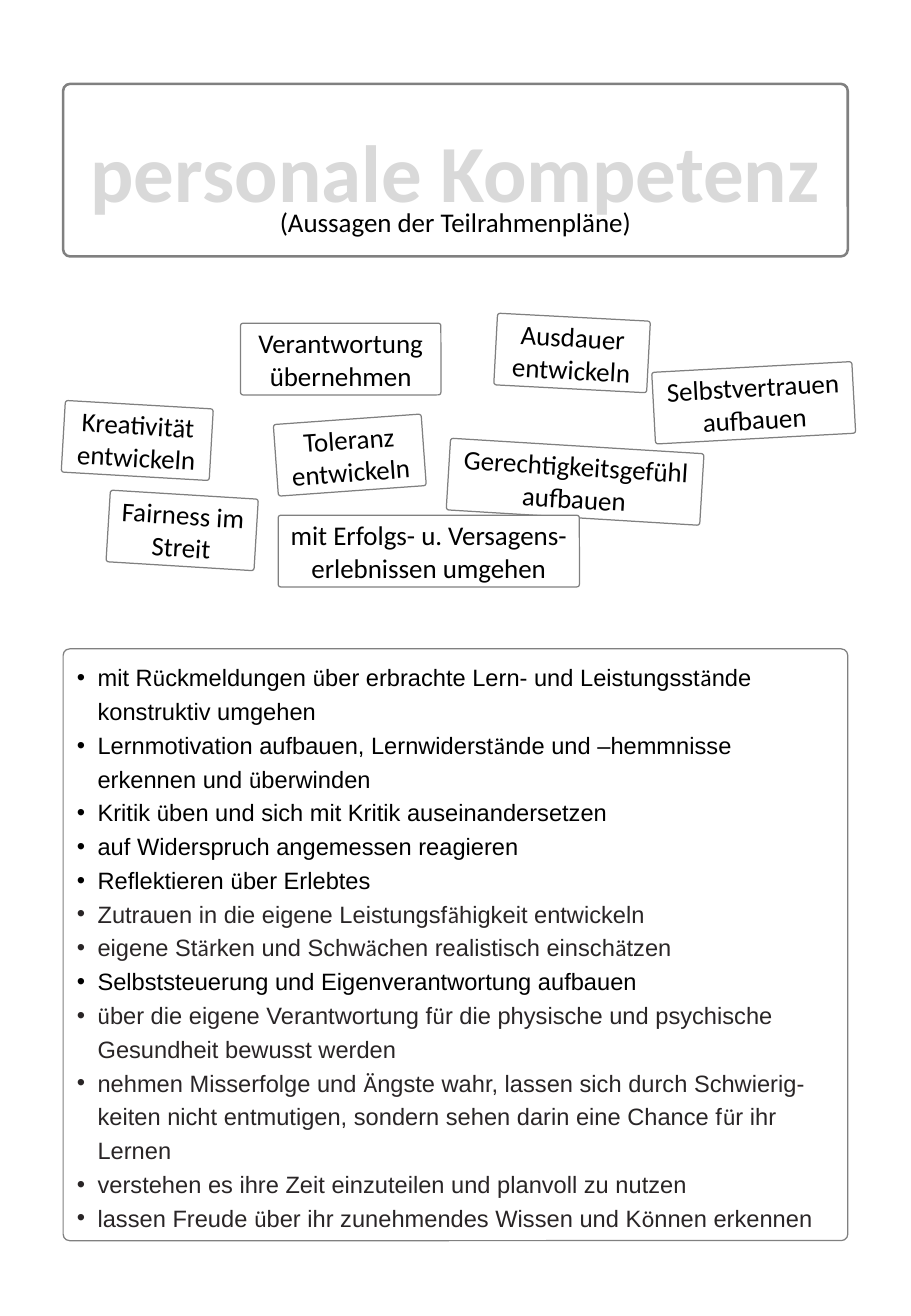
from itertools import groupby

from lxml import etree
from pptx import Presentation
from pptx.dml.color import RGBColor
from pptx.enum.shapes import MSO_SHAPE
from pptx.enum.text import MSO_ANCHOR, PP_ALIGN
from pptx.oxml.ns import qn
from pptx.util import Inches, Pt

ROUND = MSO_SHAPE.ROUNDED_RECTANGLE
MIDDLE = MSO_ANCHOR.MIDDLE
CENTER = PP_ALIGN.CENTER
LEFT = PP_ALIGN.LEFT

BLACK = RGBColor(0x00, 0x00, 0x00)
WHITE = RGBColor(0xFF, 0xFF, 0xFF)
GRAY = RGBColor(0x80, 0x80, 0x80)
PALE = RGBColor(0xD9, 0xD9, 0xD9)
DARK = RGBColor(0x29, 0x25, 0x26)

CELL = Inches(0.1)
WIDE, TALL = 75, 108.3
EDGE, SPAN = 5.2, 64.6
HANG = 1.7

CARDS = [
    ("Verantwortung übernehmen", 19.8, 26.6, 16.5, 0),
    ("Toleranz entwickeln", 22.7, 34.5, 12.2, -4.1),
    ("Kreativität entwickeln", 5.2, 33.3, 12.2, 3.3),
    ("Ausdauer entwickeln", 40.8, 26.1, 12.6, 3),
    ("Gerechtigkeitsgefühl aufbauen", 36.9, 36.7, 20.9, 3.5),
    ("Fairness im Streit", 8.9, 40.7, 12.2, 3.5),
    ("Selbstvertrauen aufbauen", 53.8, 30.2, 16.5, -3.1),
    ("mit Erfolgs- u. Versagens-erlebnissen umgehen", 22.9, 42.4, 24.8, 0),
]

GOALS = [
    (BLACK, ["mit Rückmeldungen über erbrachte Lern- und Leistungsstände",
             "konstruktiv umgehen"]),
    (BLACK, ["Lernmotivation aufbauen, Lernwiderstände und –hemmnisse",
             "erkennen und überwinden"]),
    (BLACK, ["Kritik üben und sich mit Kritik auseinandersetzen"]),
    (BLACK, ["auf Widerspruch angemessen reagieren"]),
    (BLACK, ["Reflektieren über Erlebtes"]),
    (DARK, ["Zutrauen in die eigene Leistungsfähigkeit entwickeln"]),
    (DARK, ["eigene Stärken und Schwächen realistisch einschätzen"]),
    (BLACK, ["Selbststeuerung und Eigenverantwortung aufbauen"]),
    (DARK, ["über die eigene Verantwortung für die physische und psychische",
            "Gesundheit bewusst werden"]),
    (DARK, ["nehmen Misserfolge und Ängste wahr, lassen sich durch Schwierig-",
            "keiten nicht entmutigen, sondern sehen darin eine Chance für ihr",
            "Lernen"]),
    (DARK, ["verstehen es ihre Zeit einzuteilen und planvoll zu nutzen"]),
    (DARK, ["lassen Freude über ihr zunehmendes Wissen und Können erkennen"]),
]


def grid(*cells):
    """Turn grid cells into slide lengths."""
    return [round(cell * CELL) for cell in cells]


class Sheet:
    """Hold the style and the current slide, and draw each kind of element."""

    def __init__(self, deck):
        """Add a blank slide to the deck."""
        self.slide = deck.slides.add_slide(deck.slide_layouts[6])
        self.face = "Calibri"
        self.plain = "Arial"

    def style(self, run, size, color=BLACK, face=None, bold=False):
        """Set the font of one run."""
        font = run.font
        font.name = face or self.face
        font.size = Pt(size)
        font.bold = bold
        font.color.rgb = color

    def center(self, frame, text, size, color=BLACK, bold=False):
        """Put one centred paragraph into a frame."""
        frame.word_wrap = True
        frame.text = text
        para = frame.paragraphs[0]
        para.alignment = CENTER
        self.style(para.runs[0], size, color, bold=bold)

    def box(self, x, y, w, h, bend, line=0.75):
        """Draw a rounded outline without a fill."""
        shape = self.slide.shapes.add_shape(ROUND, *grid(x, y, w, h))
        shape.adjustments[0] = bend
        shape.shadow.inherit = False
        shape.fill.background()
        shape.line.color.rgb = GRAY
        shape.line.width = Pt(line)
        shape.text_frame.vertical_anchor = MIDDLE
        return shape

    def title(self, text, y, h):
        """Draw the framed heading."""
        shape = self.box(EDGE, y, SPAN, h, 0.04, 1.5)
        self.center(shape.text_frame, text, 48, PALE, True)

    def label(self, text, x, y, w, h):
        """Draw a centred line of text."""
        area = self.slide.shapes.add_textbox(*grid(x, y, w, h))
        self.center(area.text_frame, text, 16)

    def card(self, text, x, y, w, turn):
        """Draw one tilted white card."""
        shape = self.box(x, y, w, 5.9, 0.037)
        shape.fill.solid()
        shape.fill.fore_color.rgb = WHITE
        shape.rotation = turn
        frame = shape.text_frame
        frame.margin_left, frame.margin_right = grid(0.4, 0.4)
        self.center(frame, text, 16)

    def goals(self, items, y, h):
        """Draw the framed list of goals."""
        frame = self.box(EDGE, y, SPAN, h, 0.011).text_frame
        frame.word_wrap = True
        frame.margin_left, frame.margin_right = grid(1, 0.4)
        rows = [(color, text, spot == 0)
                for color, lines in items for spot, text in enumerate(lines)]
        for spot, (color, text, first) in enumerate(rows):
            para = frame.add_paragraph() if spot else frame.paragraphs[0]
            para.alignment = LEFT
            para.line_spacing = Pt(20)
            self.hang(para, first)
            for accent, part in groupby(text, lambda sign: sign in "äöüÄ"):
                run = para.add_run()
                run.text = "".join(part)
                self.style(run, 14, color, self.face if accent else self.plain)

    def hang(self, para, first):
        """Indent a paragraph and mark the first line of a goal."""
        props = para._p.get_or_add_pPr()
        depth = grid(HANG)[0]
        props.set("marL", str(depth))
        props.set("indent", str(-depth if first else 0))
        if first:
            etree.SubElement(props, qn("a:buFont")).set("typeface", self.plain)
            etree.SubElement(props, qn("a:buChar")).set("char", "•")
        else:
            etree.SubElement(props, qn("a:buNone"))


def main():
    """Build the slide and save it."""
    deck = Presentation()
    deck.slide_width, deck.slide_height = grid(WIDE, TALL)
    sheet = Sheet(deck)
    sheet.title("personale Kompetenz", 6.9, 14.2)
    for card in CARDS:
        sheet.card(*card)
    sheet.goals(GOALS, 53.4, 48.7)
    sheet.label("(Aussagen der Teilrahmenpläne)", 12.7, 16.4, 49.6, 3.7)
    deck.save("out.pptx")


if __name__ == "__main__":
    main()
